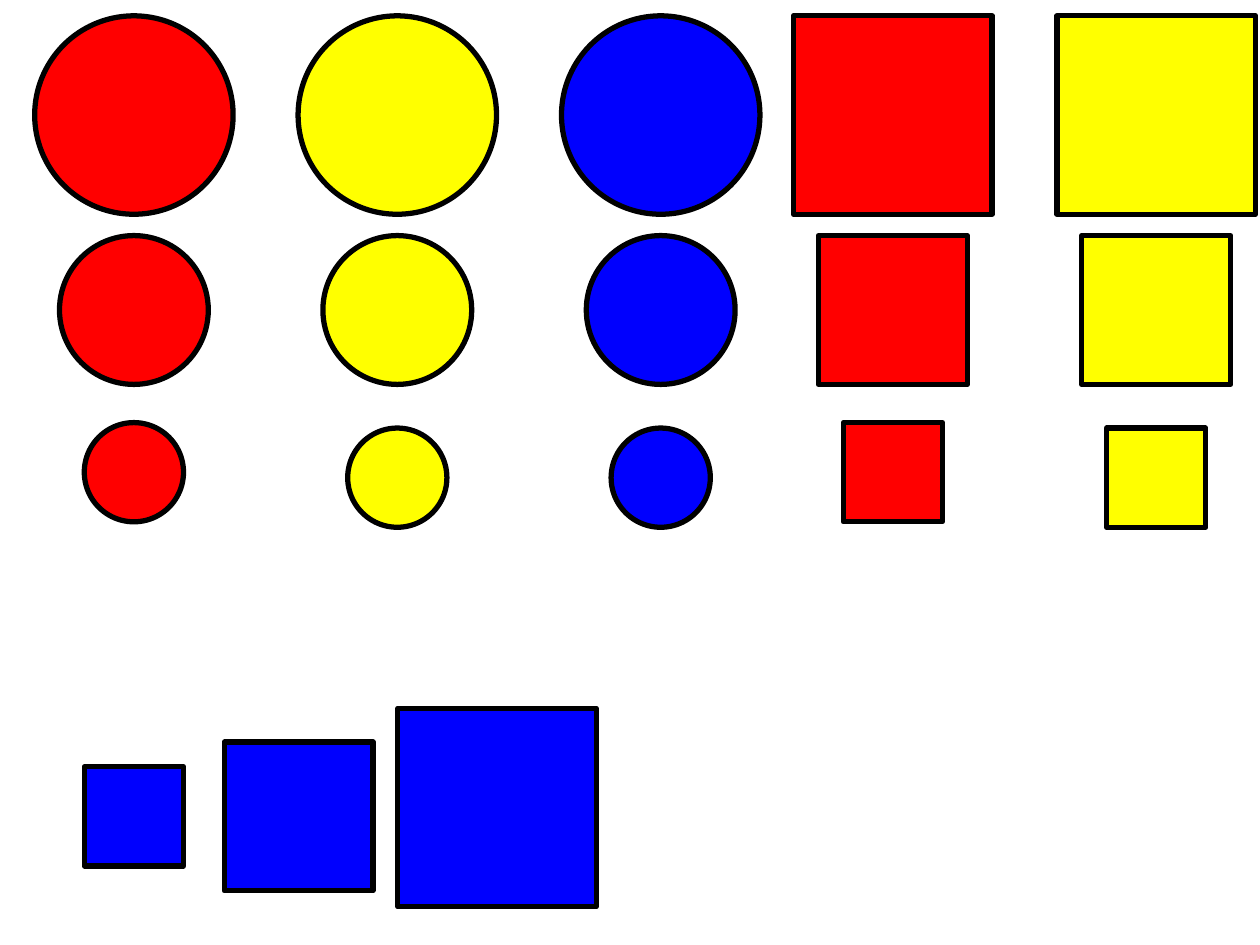
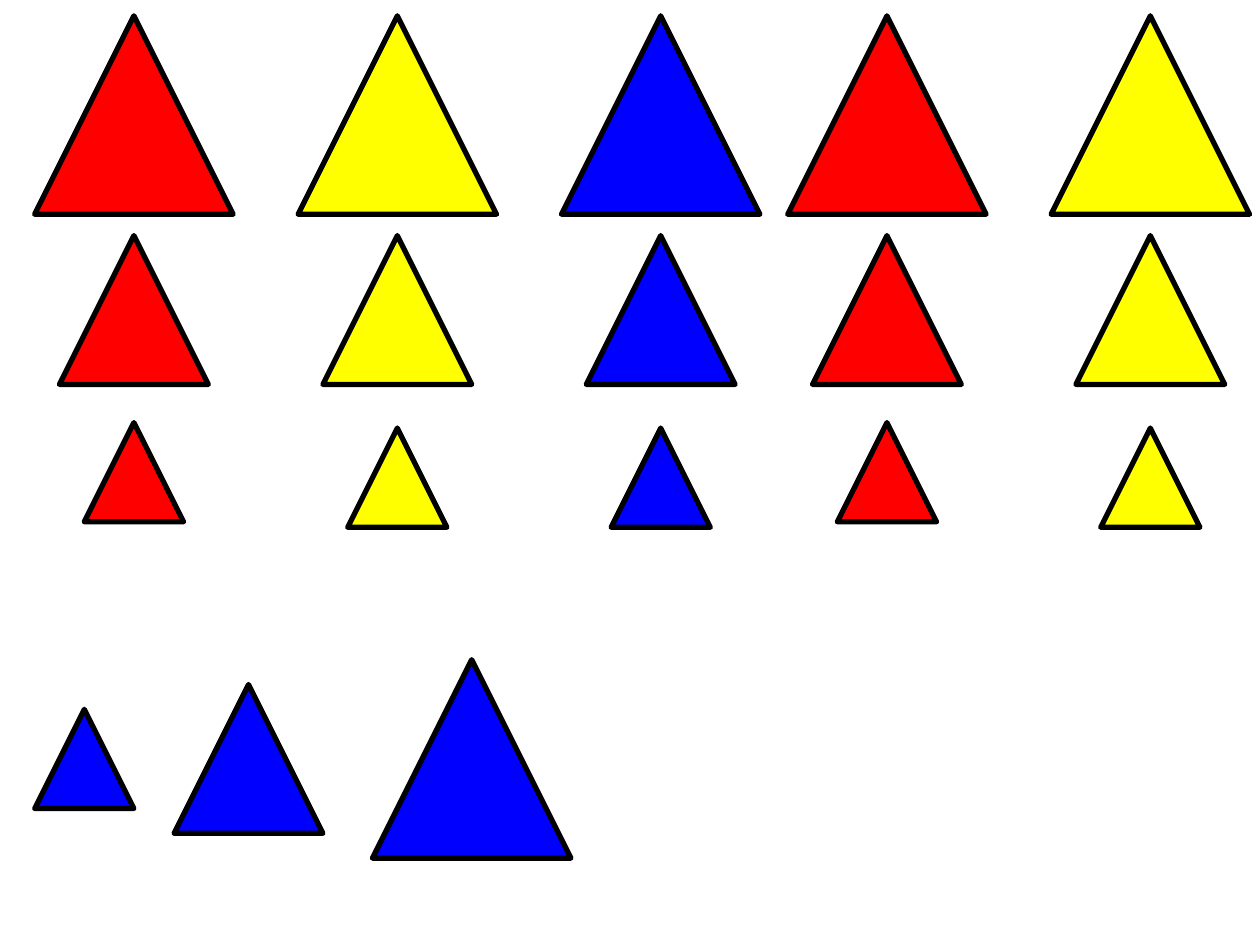
from dataclasses import dataclass

from pptx import Presentation
from pptx.dml.color import RGBColor as Rgb
from pptx.enum.shapes import MSO_SHAPE as Kind
from pptx.util import Cm, Pt


# Colours and line width
@dataclass(frozen=True)
class Theme:
    red: Rgb = Rgb(0xFF, 0x00, 0x00)
    yellow: Rgb = Rgb(0xFF, 0xFF, 0x00)
    blue: Rgb = Rgb(0x00, 0x00, 0xFE)
    edge: Rgb = Rgb(0x00, 0x00, 0x00)
    width: float = 3


# Grid in cm: each size has its own row
STEP = 5.31
TOPS = {3: 4.75, 2: 8.63, 4: 0.32}
RAISE = 0.11  # the small red pieces sit a little higher


class Deck:
    def __init__(self, theme):
        self.theme = theme
        self.show = Presentation()
        self.show.slide_width, self.show.slide_height = Cm(25.4), Cm(19.05)
        self.slide = None

    def page(self):
        self.slide = self.show.slides.add_slide(self.show.slide_layouts[6])

    def piece(self, kind, size, mid, top, fill):
        """Draw one block, centred on mid."""
        block = self.slide.shapes.add_shape(
            kind, Cm(mid - size / 2), Cm(top), Cm(size), Cm(size))
        block.shadow.inherit = False
        block.fill.solid()
        block.fill.fore_color.rgb = fill
        block.line.color.rgb = self.theme.edge
        block.line.width = Pt(self.theme.width)

    def family(self, kind, first, loose=None):
        """Draw three sizes in three colours.

        The columns start at first; loose gives the centre of each blue
        piece by size where blue has no column of its own.
        """
        theme = self.theme
        for size, top in TOPS.items():
            lift = RAISE if size == 2 else 0
            self.piece(kind, size, first, top - lift, theme.red)
            self.piece(kind, size, first + STEP, top, theme.yellow)
            if loose:
                mid, level = loose[size]
                self.piece(kind, size, mid, level - size / 2, theme.blue)
            else:
                self.piece(kind, size, first + 2 * STEP, top, theme.blue)


def main():
    deck = Deck(Theme())

    # Circles and squares
    deck.page()
    deck.family(Kind.OVAL, 2.7)
    deck.family(Kind.RECTANGLE, 18,
                {2: (2.7, 16.46), 3: (6.02, 16.46), 4: (10.02, 16.28)})

    # Two sets of triangles
    deck.page()
    deck.family(Kind.ISOSCELES_TRIANGLE, 2.7)
    deck.family(Kind.ISOSCELES_TRIANGLE, 17.88,
                {2: (1.7, 15.3), 3: (5.01, 15.3), 4: (9.51, 15.3)})

    deck.show.save("out.pptx")


if __name__ == "__main__":
    main()
